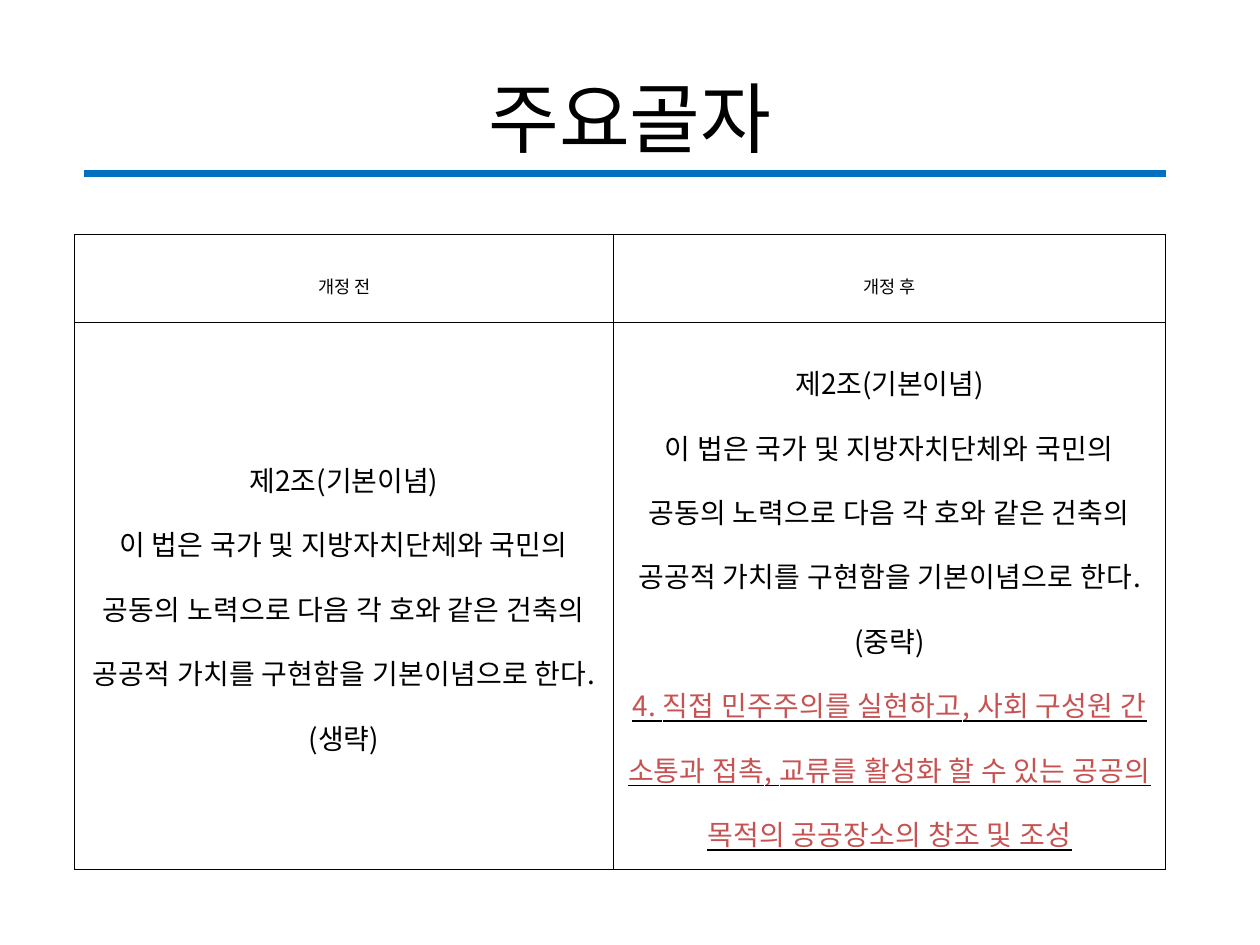
from lxml.etree import SubElement
from pptx import Presentation
from pptx.dml.color import RGBColor
from pptx.enum.shapes import MSO_CONNECTOR
from pptx.enum.text import MSO_ANCHOR, PP_ALIGN
from pptx.oxml import parse_xml
from pptx.oxml.ns import nsdecls, qn
from pptx.util import Inches, Pt

FONT = "Noto Sans CJK KR"
COLORS = {"text": "000000", "rule": "0070C0", "change": "C75252", "border": "000000"}
COLUMNS = [4.28, 4.38]
ROWS = [0.7, 4.34]
SENTENCE = (
    "이 법은 국가 및 지방자치단체와 국민의 공동의 노력으로 다음 각 호와 같은 건축의 "
    "공공적 가치를 구현함을 기본이념으로 한다."
)
ADDITION = (
    "4. 직접 민주주의를 실현하고, 사회 구성원 간 소통과 접촉, 교류를 활성화 할 수 있는 "
    "공공의 목적의 공공장소의 창조 및 조성"
)
ARTICLE = ["제2조(기본이념)", SENTENCE]
CONTENT = [
    [["개정 전"], ["개정 후"]],
    [ARTICLE + ["(생략)"], ARTICLE + ["(중략)", ADDITION]],
]
SIZES = [10, 16]


def solid_fill(color):
    return f'<a:solidFill><a:srgbClr val="{COLORS[color]}"/></a:solidFill>'


def format_run(run, size, color="text"):
    font = run.font
    font.size = Pt(size)
    font.name = FONT
    font.color.rgb = RGBColor.from_string(COLORS[color])
    SubElement(run._r.get_or_add_rPr(), qn("a:ea"), typeface=FONT)


def widen_run(run, points):
    run._r.get_or_add_rPr().set("spc", str(round(points * 100)))


def underline_run(run):
    run.font.underline = True
    latin = run._r.rPr.find(qn("a:latin"))
    latin.addprevious(parse_xml(f'<a:uFill {nsdecls("a")}>{solid_fill("text")}</a:uFill>'))


def add_title(slide, text):
    title = slide.shapes.title
    title.left, title.top = Inches(0.5), Inches(0.3)
    title.width, title.height = Inches(9), Inches(1.25)
    frame = title.text_frame
    frame.text = text
    frame.vertical_anchor = MSO_ANCHOR.MIDDLE
    paragraph = frame.paragraphs[0]
    paragraph.alignment = PP_ALIGN.CENTER
    format_run(paragraph.runs[0], 44)


def add_rule(slide, left, right, top):
    rule = slide.shapes.add_connector(
        MSO_CONNECTOR.STRAIGHT, Inches(left), Inches(top), Inches(right), Inches(top)
    )
    rule.line.color.rgb = RGBColor.from_string(COLORS["rule"])
    rule.line.width = Pt(4)
    SubElement(rule._element.spPr, qn("a:effectLst"))


def add_borders(cell):
    properties = cell._tc.get_or_add_tcPr()
    for index, side in enumerate(("lnL", "lnR", "lnT", "lnB")):
        border = f'<a:{side} {nsdecls("a")} w="{Pt(0.28)}">{solid_fill("border")}</a:{side}>'
        properties.insert(index, parse_xml(border))


def fill_cell(cell, lines, size):
    cell.fill.background()
    cell.vertical_anchor = MSO_ANCHOR.MIDDLE
    cell.margin_left = cell.margin_right = Inches(0.08)
    cell.margin_top = cell.margin_bottom = Inches(0.02)
    cell.text_frame.text = "\n".join(lines)
    for paragraph in cell.text_frame.paragraphs:
        paragraph.alignment = PP_ALIGN.CENTER
        paragraph.line_spacing = 1.6
        run = paragraph.runs[0]
        changed = run.text == ADDITION
        format_run(run, size, "change" if changed else "text")
        if run.text in (SENTENCE, ADDITION):
            widen_run(run, 0.2)
        if changed:
            underline_run(run)
    add_borders(cell)


def add_comparison(slide, left, top):
    frame = slide.shapes.add_table(
        len(ROWS), len(COLUMNS), Inches(left), Inches(top),
        Inches(sum(COLUMNS)), Inches(sum(ROWS)),
    )
    table = frame.table
    table.first_row = table.horz_banding = False
    for column, width in zip(table.columns, COLUMNS):
        column.width = Inches(width)
    for row, height, contents, size in zip(table.rows, ROWS, CONTENT, SIZES):
        row.height = Inches(height)
        for cell, lines in zip(row.cells, contents):
            fill_cell(cell, lines, size)


def main():
    """Build the slide comparing the article before and after its revision."""
    presentation = Presentation()
    presentation.slide_width, presentation.slide_height = Inches(10), Inches(7.5)
    slide = presentation.slides.add_slide(presentation.slide_layouts[5])
    add_title(slide, "주요골자")
    add_rule(slide, 0.67, 9.25, 1.38)
    add_comparison(slide, 0.59, 1.86)
    presentation.save("out.pptx")


if __name__ == "__main__":
    main()
